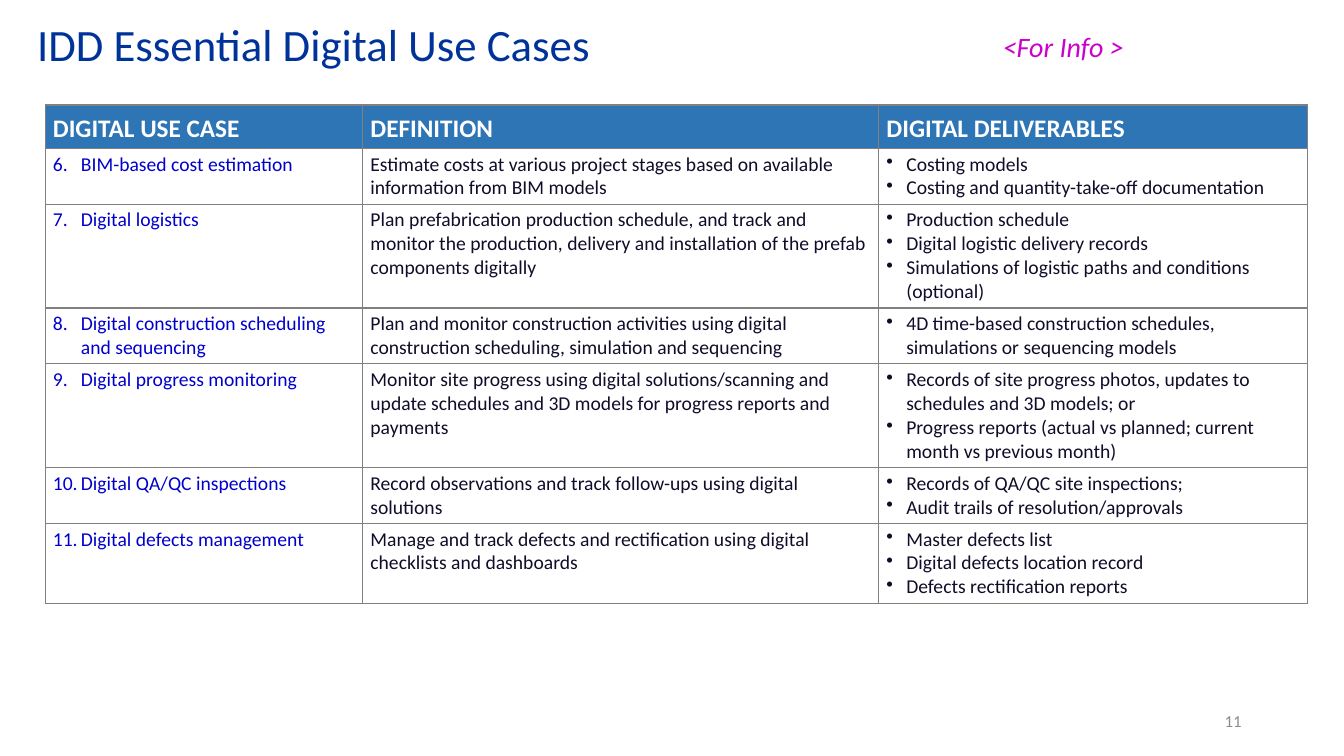
import pptx
import pptx.util
import pptx.dml.color
import pptx.enum.text
from lxml import etree

Pt = pptx.util.Pt
ALIGN = pptx.enum.text.PP_ALIGN
ANCHOR = pptx.enum.text.MSO_ANCHOR

# Content
TITLE = "IDD Essential Digital Use Cases"
TAG = "<For Info >"
PAGE = "11"
HEADINGS = ["DIGITAL USE CASE", "DEFINITION", "DIGITAL DELIVERABLES"]
FIRST_NUMBER = 6
# use case, definition, deliverables, lines of text in the row
USE_CASES = [
    ("BIM-based cost estimation",
     "Estimate costs at various project stages based on available information from BIM models",
     ["Costing models", "Costing and quantity-take-off documentation"], 2),
    ("Digital logistics",
     "Plan prefabrication production schedule, and track and monitor the production, "
     "delivery and installation of the prefab components digitally",
     ["Production schedule", "Digital logistic delivery records",
      "Simulations of logistic paths and conditions (optional)"], 4),
    ("Digital construction scheduling and sequencing",
     "Plan and monitor construction activities using digital construction scheduling, "
     "simulation and sequencing",
     ["4D time-based construction schedules, simulations or sequencing models"], 2),
    ("Digital progress monitoring",
     "Monitor site progress using digital solutions/scanning and update schedules and "
     "3D models for progress reports and payments",
     ["Records of site progress photos, updates to schedules and 3D models; or",
      "Progress reports (actual vs planned; current month vs previous month)"], 4),
    ("Digital QA/QC inspections",
     "Record observations and track follow-ups using digital solutions",
     ["Records of QA/QC site inspections;", "Audit trails of resolution/approvals"], 2),
    ("Digital defects management",
     "Manage and track defects and rectification using digital checklists and dashboards",
     ["Master defects list", "Digital defects location record",
      "Defects rectification reports"], 3),
]

# Style and layout, in points
FONT = "Calibri"
NAVY, MAGENTA, PAGE_GREY = "003399", "CC00CC", "8C8C8C"
HEADER_BLUE, CASE_BLUE, INK = "2E75B6", "0000CC", "0F0D29"
WHITE, RULE_GREY = "FFFFFF", "808080"
COLUMN_WIDTHS = [226.8, 368.6, 306]
TABLE_LEFT, TABLE_TOP = 32.4, 75
HEADER_HEIGHT, LINE_HEIGHT = 31, 17.08
SIDE_MARGIN, END_MARGIN = 5.4, 2.88
NUMBER_INDENT, BULLET_INDENT = 20, 14.2


def rgb(value):
    return pptx.dml.color.RGBColor.from_string(value)


def write(paragraph, text, size, color, bold=False, italic=False):
    paragraph.text = text
    font = paragraph.font
    font.name, font.size, font.bold, font.italic = FONT, Pt(size), bold, italic
    font.color.rgb = rgb(color)


def add_label(box, text, size, color, anchor=ANCHOR.TOP, wrap=True, italic=False):
    frame = slide.shapes.add_textbox(*map(Pt, box)).text_frame
    frame.word_wrap, frame.vertical_anchor = wrap, anchor
    write(frame.paragraphs[0], text, size, color, italic=italic)
    return frame.paragraphs[0]


def add_child(parent, tag, **attributes):
    child = etree.SubElement(parent, pptx.oxml.ns.qn(tag))
    for name, value in attributes.items():
        child.set(name, str(value))
    return child


def hang(paragraph, indent, marker, **attributes):
    properties = paragraph._p.get_or_add_pPr()
    properties.set("marL", str(Pt(indent)))
    properties.set("indent", str(-Pt(indent)))
    mark = add_child(properties, marker, **attributes)
    # the marker goes before the default run properties
    properties.insert(0, mark)


def style_cell(cell, fill):
    cell.margin_left = cell.margin_right = Pt(SIDE_MARGIN)
    cell.margin_top = cell.margin_bottom = Pt(END_MARGIN)
    properties = cell._tc.get_or_add_tcPr()
    for side in ("a:lnL", "a:lnR", "a:lnT", "a:lnB"):
        line = add_child(properties, side, w=Pt(1))
        add_child(add_child(line, "a:solidFill"), "a:srgbClr", val=RULE_GREY)
    cell.fill.solid()
    cell.fill.fore_color.rgb = rgb(fill)


presentation = pptx.Presentation()
presentation.slide_width, presentation.slide_height = Pt(960), Pt(540)
slide = presentation.slides.add_slide(presentation.slide_layouts[6])

# Page number, title and tag
add_label((678, 500.5, 216, 28.8), PAGE, 12, PAGE_GREY, ANCHOR.MIDDLE).alignment = ALIGN.RIGHT
add_label((19.4, 5, 918, 56.9), TITLE, 32, NAVY, ANCHOR.MIDDLE).line_spacing = 0.9
add_label((709.2, 17.3, 101.5, 31.7), TAG, 20, MAGENTA, wrap=False, italic=True)

# Table frame
row_heights = [HEADER_HEIGHT] + [lines * LINE_HEIGHT + 2 * END_MARGIN
                                 for *_, lines in USE_CASES]
table = slide.shapes.add_table(
    len(row_heights), len(COLUMN_WIDTHS), Pt(TABLE_LEFT), Pt(TABLE_TOP),
    Pt(sum(COLUMN_WIDTHS)), Pt(sum(row_heights))).table
table.horz_banding = False
for column, width in zip(table.columns, COLUMN_WIDTHS):
    column.width = Pt(width)
for row, height in zip(table.rows, row_heights):
    row.height = Pt(height)

# Header row
for cell, heading in zip(table.rows[0].cells, HEADINGS):
    style_cell(cell, HEADER_BLUE)
    paragraph = cell.text_frame.paragraphs[0]
    write(paragraph, heading, 18, WHITE, bold=True)
    paragraph.line_spacing = 1.15

# Use case rows
for index, (use_case, definition, deliverables, _) in enumerate(USE_CASES):
    cells = list(table.rows[index + 1].cells)
    for cell in cells:
        style_cell(cell, WHITE)
    case_frame, definition_frame, deliverable_frame = [cell.text_frame for cell in cells]

    case_paragraph = case_frame.paragraphs[0]
    write(case_paragraph, use_case, 14, CASE_BLUE)
    hang(case_paragraph, NUMBER_INDENT, "a:buAutoNum",
         type="arabicPeriod", startAt=FIRST_NUMBER + index)

    write(definition_frame.paragraphs[0], definition, 14, INK)

    for position, deliverable in enumerate(deliverables):
        paragraph = (deliverable_frame.add_paragraph() if position
                     else deliverable_frame.paragraphs[0])
        write(paragraph, deliverable, 14, INK)
        hang(paragraph, BULLET_INDENT, "a:buChar", char="•")

presentation.save("out.pptx")
